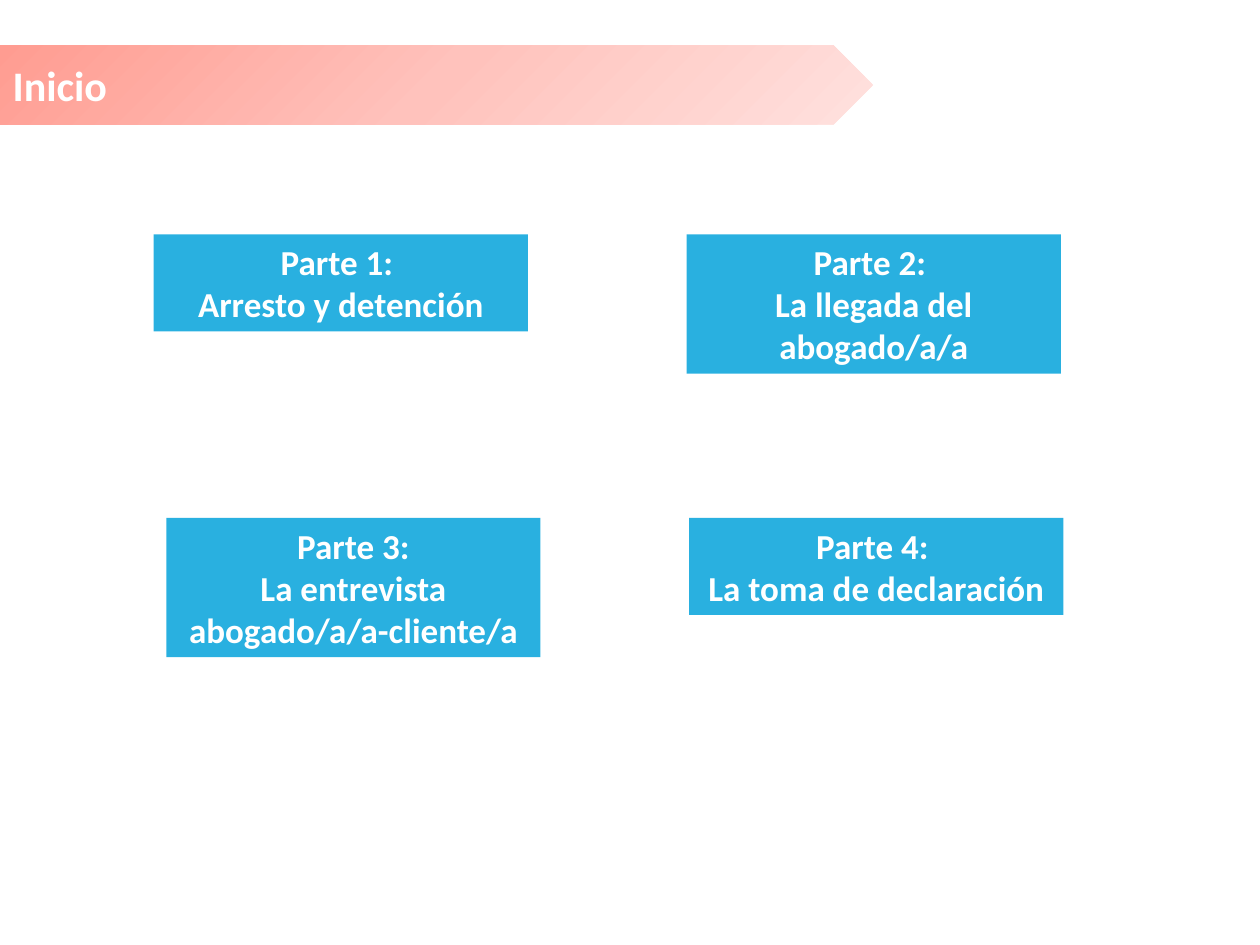
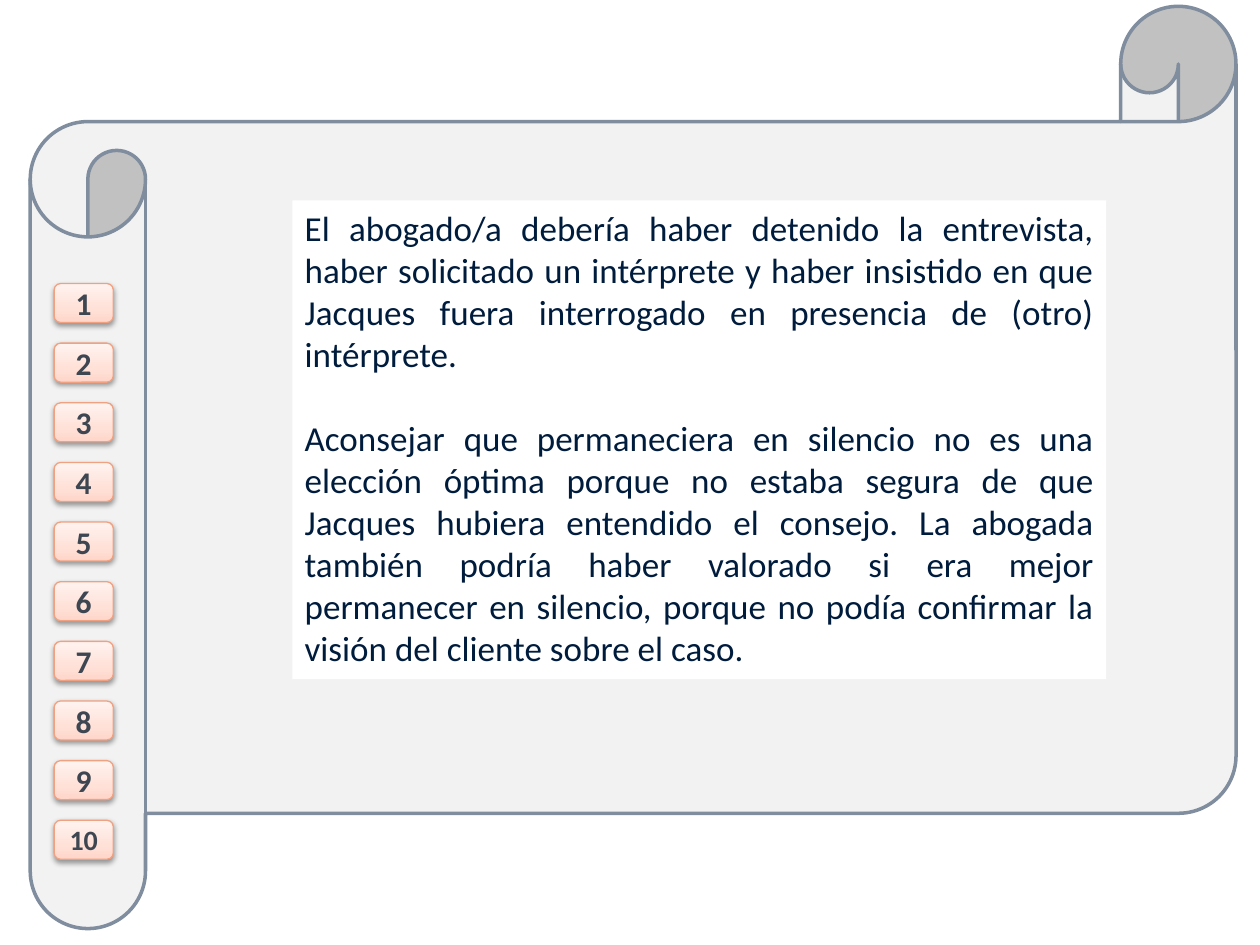
from lxml.etree import SubElement
from pptx import Presentation
from pptx.dml.color import RGBColor
from pptx.enum.shapes import MSO_SHAPE
from pptx.enum.text import MSO_ANCHOR, PP_ALIGN
from pptx.oxml import parse_xml
from pptx.oxml.ns import nsdecls, qn
from pptx.util import Inches, Pt

FONT = "Calibri"
COLOURS = {
    "white": "FFFFFF",
    "part": "00A2DB",
    "scroll": "F2F2F2",
    "scroll_line": "7F8D9E",
    "body": "001C3D",
    "button_line": "F0A181",
    "button_text": "3D4651",
    "shadow": "000000",
}
BAND_STOPS = [(0, "FF9C91"), (50, "FFC2BC"), (100, "FFE1DE")]
BAND_DIRECTION = '<a:path path="circle"><a:fillToRect r="100000" b="100000"/></a:path>'
BUTTON_STOPS = [(0, "FFD5C9"), (35, "FFE1D8"), (100, "FFF3F0")]
BUTTON_DIRECTION = '<a:lin ang="16200000" scaled="0"/>'
PART_OPACITY = 84
PART_WIDTH = 2.97
TEXT_INSET = 0.05
LINE_HEIGHT = 0.335

# left, top, number of text lines, paragraphs
PARTS = [
    (1.22, 1.86, 2, ["Parte 1: ", "Arresto y detención"]),
    (5.45, 1.86, 3, ["Parte 2: ", "La llegada del abogado/a/a"]),
    (1.32, 4.11, 3, ["Parte 3:", "La entrevista abogado/a/a-cliente/a"]),
    (5.47, 4.11, 2, ["Parte 4: ", "La toma de declaración"]),
]
ANSWER = [
    "El abogado/a debería haber detenido la entrevista, haber solicitado un "
    "intérprete y haber insistido en que Jacques fuera interrogado en presencia "
    "de (otro) intérprete.",
    "Aconsejar que permaneciera en silencio no es una elección óptima porque no "
    "estaba segura de que Jacques hubiera entendido el consejo. La abogada "
    "también podría haber valorado si era mejor permanecer en silencio, porque "
    "no podía confirmar la visión del cliente sobre el caso.",
]


def colour(name):
    return RGBColor.from_string(COLOURS[name])


def add_box(slide, preset, box, fill=None, line=None, line_width=1):
    """Add a preset shape without shadow; box is left, top, width, height in inches."""
    shape = slide.shapes.add_shape(preset, *map(Inches, box))
    shape.shadow.inherit = False
    if fill:
        shape.fill.solid()
        shape.fill.fore_color.rgb = colour(fill)
    if line:
        shape.line.color.rgb = colour(line)
        shape.line.width = Pt(line_width)
    else:
        shape.line.fill.background()
    return shape


def set_gradient(shape, stops, direction):
    stop_xml = "".join(
        f'<a:gs pos="{position * 1000}"><a:srgbClr val="{value}"/></a:gs>'
        for position, value in stops
    )
    shape.fill.background()
    properties = shape.element.spPr
    gradient = parse_xml(
        f'<a:gradFill {nsdecls("a")} rotWithShape="1">'
        f"<a:gsLst>{stop_xml}</a:gsLst>{direction}</a:gradFill>"
    )
    properties.replace(properties.find(qn("a:noFill")), gradient)


def set_opacity(shape, percent):
    fill_colour = shape.element.spPr.find(qn("a:solidFill")).find(qn("a:srgbClr"))
    SubElement(fill_colour, qn("a:alpha"), val=str(percent * 1000))


def add_drop_shadow(shape):
    effects = shape.element.spPr.find(qn("a:effectLst"))
    shadow = SubElement(
        effects, qn("a:outerShdw"),
        blurRad=str(Pt(3.1)), dist=str(Pt(1.6)), dir="5400000", rotWithShape="0",
    )
    shadow_colour = SubElement(shadow, qn("a:srgbClr"), val=COLOURS["shadow"])
    SubElement(shadow_colour, qn("a:alpha"), val="38000")


def write_text(shape, texts, size, text_colour, bold=False, align=PP_ALIGN.LEFT,
               anchor=MSO_ANCHOR.TOP, gap=0):
    """Write one paragraph per text, with gap points between paragraphs."""
    frame = shape.text_frame
    frame.word_wrap = True
    frame.vertical_anchor = anchor
    for index, text in enumerate(texts):
        paragraph = frame.add_paragraph() if index else frame.paragraphs[0]
        paragraph.alignment = align
        if index and gap:
            paragraph.space_before = Pt(gap)
        run = paragraph.add_run()
        run.text = text
        run.font.name = FONT
        run.font.size = Pt(size)
        run.font.bold = bold
        run.font.color.rgb = colour(text_colour)


def add_title_band(slide, text, box):
    band = add_box(slide, MSO_SHAPE.PENTAGON, box)
    set_gradient(band, BAND_STOPS, BAND_DIRECTION)
    title = slide.shapes.title
    title.left, title.top, title.width, title.height = map(Inches, box)
    write_text(title, [text], 24, "white", bold=True, anchor=MSO_ANCHOR.MIDDLE)
    slide.shapes._spTree.append(title.element)


def add_part(slide, left, top, line_count, texts):
    height = 2 * TEXT_INSET + line_count * LINE_HEIGHT
    part = add_box(slide, MSO_SHAPE.RECTANGLE, (left, top, PART_WIDTH, height), "part")
    set_opacity(part, PART_OPACITY)
    write_text(part, texts, 20, "white", bold=True, align=PP_ALIGN.CENTER)


def add_number_buttons(slide, box, count):
    """Spread numbered buttons evenly down the column box."""
    left, top, width, height = box
    button_height = 0.31
    pitch = (height - button_height) / (count - 1)
    for number in range(1, count + 1):
        button_box = (left, top + (number - 1) * pitch, width, button_height)
        button = add_box(slide, MSO_SHAPE.ROUNDED_RECTANGLE, button_box,
                         line="button_line", line_width=0.75)
        set_gradient(button, BUTTON_STOPS, BUTTON_DIRECTION)
        add_drop_shadow(button)
        write_text(button, [str(number)], 18 if number < 10 else 16, "button_text",
                   bold=True, align=PP_ALIGN.CENTER, anchor=MSO_ANCHOR.MIDDLE)
        button.text_frame.word_wrap = False


def build_start_slide(presentation):
    slide = presentation.slides.add_slide(presentation.slide_layouts[5])
    add_title_band(slide, "Inicio", (0, 0.36, 6.93, 0.63))
    for part in PARTS:
        add_part(slide, *part)


def build_answer_slide(presentation):
    slide = presentation.slides.add_slide(presentation.slide_layouts[6])
    add_box(slide, MSO_SHAPE.HORIZONTAL_SCROLL, (0.24, 0.05, 9.57, 7.32),
            "scroll", "scroll_line", 2)
    answer = add_box(slide, MSO_SHAPE.RECTANGLE, (2.32, 1.59, 6.46, 3.8), "white")
    write_text(answer, ANSWER, 20, "body", align=PP_ALIGN.JUSTIFY, gap=24)
    add_number_buttons(slide, (0.43, 2.25, 0.47, 4.57), 10)


def main():
    presentation = Presentation()
    presentation.slide_width = Inches(10)
    presentation.slide_height = Inches(7.5)
    build_start_slide(presentation)
    build_answer_slide(presentation)
    presentation.save("out.pptx")


if __name__ == "__main__":
    main()
